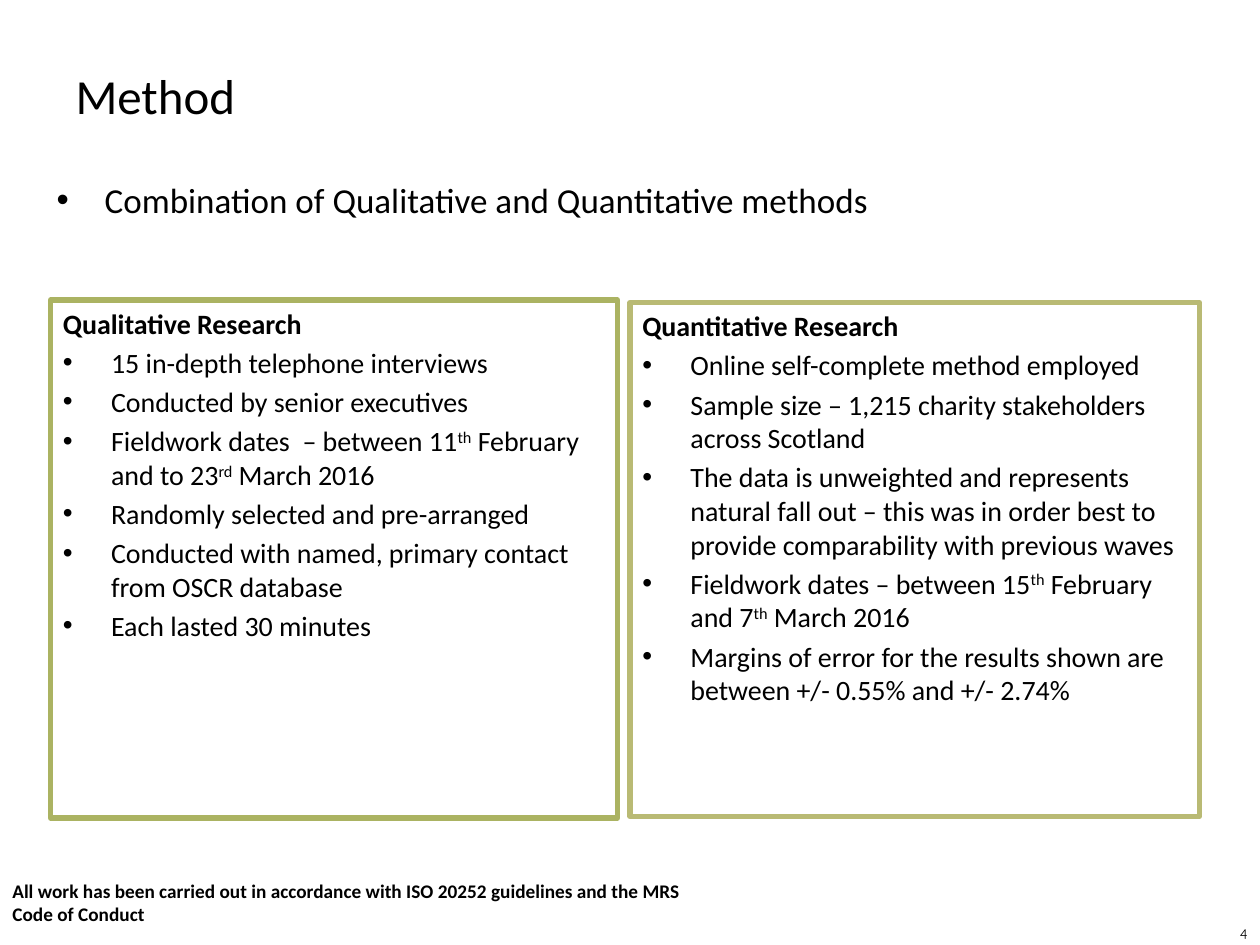
from lxml.etree import SubElement
from pptx import Presentation
from pptx.dml.color import RGBColor
from pptx.enum.shapes import MSO_SHAPE as Shape
from pptx.enum.text import MSO_ANCHOR as Anchor, PP_ALIGN as Align
from pptx.oxml.ns import qn
from pptx.util import Cm, Pt

BLACK = RGBColor(0x00, 0x00, 0x00)
OLIVE = RGBColor(0xAB, 0xB3, 0x62)
KHAKI = RGBColor(0xB9, 0xBA, 0x74)

TITLE = {"name": "Calibri", "size": Pt(28), "bold": False}
INTRO = {"name": "Calibri", "size": Pt(20), "bold": False}
HEADING = {"name": "Calibri", "size": Pt(16), "bold": True}
ITEM = {"name": "Calibri", "size": Pt(16), "bold": False}
FOOTNOTE = {"name": "Calibri", "size": Pt(11), "bold": True}
PAGE = {"name": "Quicksand", "size": Pt(8), "bold": False}

PANELS = [
    ((1.02, 6.05, 11.43, 10.44), OLIVE, "Qualitative Research", [
        "15 in-depth telephone interviews",
        "Conducted by senior executives",
        "Fieldwork dates  – between 11^th^ February and to 23^rd^ March 2016",
        "Randomly selected and pre-arranged",
        "Conducted with named, primary contact from OSCR database",
        "Each lasted 30 minutes",
    ]),
    ((12.7, 6.1, 11.48, 10.36), KHAKI, "Quantitative Research", [
        "Online self-complete method employed",
        "Sample size – 1,215 charity stakeholders across Scotland",
        "The data is unweighted and represents natural fall out – this was in "
        "order best to provide comparability with previous waves",
        "Fieldwork dates – between 15^th^ February and 7^th^ March 2016",
        "Margins of error for the results shown are between +/- 0.55% and +/- 2.74%",
    ]),
]
TEXT_BOXES = [
    ((0.89, 3.48, 22.99, 1.5), "Combination of Qualitative and Quantitative methods",
     INTRO, True, Align.LEFT, Anchor.TOP),
    ((0, 17.6, 14.1, 1.19),
     "All work has been carried out in accordance with ISO 20252 guidelines "
     "and the MRS Code of Conduct", FOOTNOTE, False, Align.LEFT, Anchor.TOP),
    ((19.48, 18.47, 5.92, 0.7), "4", PAGE, False, Align.RIGHT, Anchor.MIDDLE),
]


def write_paragraph(paragraph, text, font_format, bullet=False, align=Align.LEFT):
    if bullet:
        properties = paragraph._p.get_or_add_pPr()
        properties.set("marL", str(Cm(0.97)))
        properties.set("indent", str(-Cm(0.97)))
        SubElement(properties, qn("a:buFont")).set("typeface", "Arial")
        SubElement(properties, qn("a:buChar")).set("char", "•")
    paragraph.alignment = align
    for index, piece in enumerate(text.split("^")):
        run = paragraph.add_run()
        run.text = piece
        for attribute, value in font_format.items():
            setattr(run.font, attribute, value)
        run.font.color.rgb = BLACK
        if index % 2:
            run.font._element.set("baseline", "30000")


presentation = Presentation()
presentation.slide_width, presentation.slide_height = Cm(25.4), Cm(19.05)
slide = presentation.slides.add_slide(presentation.slide_layouts[5])

title = slide.shapes.title
placement = {"left": Cm(1.27), "top": Cm(0.33), "width": Cm(18.57), "height": Cm(3.18)}
for attribute, value in placement.items():
    setattr(title, attribute, value)
title.text_frame.vertical_anchor = Anchor.MIDDLE
write_paragraph(title.text_frame.paragraphs[0], "Method", TITLE)

for box, text, font_format, bullet, align, anchor in TEXT_BOXES:
    text_frame = slide.shapes.add_textbox(*map(Cm, box)).text_frame
    text_frame.word_wrap = True
    text_frame.vertical_anchor = anchor
    write_paragraph(text_frame.paragraphs[0], text, font_format, bullet, align)

for box, line_color, heading, items in PANELS:
    panel = slide.shapes.add_shape(Shape.RECTANGLE, *map(Cm, box))
    panel.shadow.inherit = False
    panel.fill.background()
    panel.line.color.rgb = line_color
    panel.line.width = Pt(3)
    text_frame = panel.text_frame
    text_frame.word_wrap = True
    text_frame.vertical_anchor = Anchor.TOP
    write_paragraph(text_frame.paragraphs[0], heading, HEADING)
    for item in items:
        paragraph = text_frame.add_paragraph()
        write_paragraph(paragraph, item, ITEM, bullet=True)
        paragraph.space_before = Pt(3.2)

presentation.save("out.pptx")
